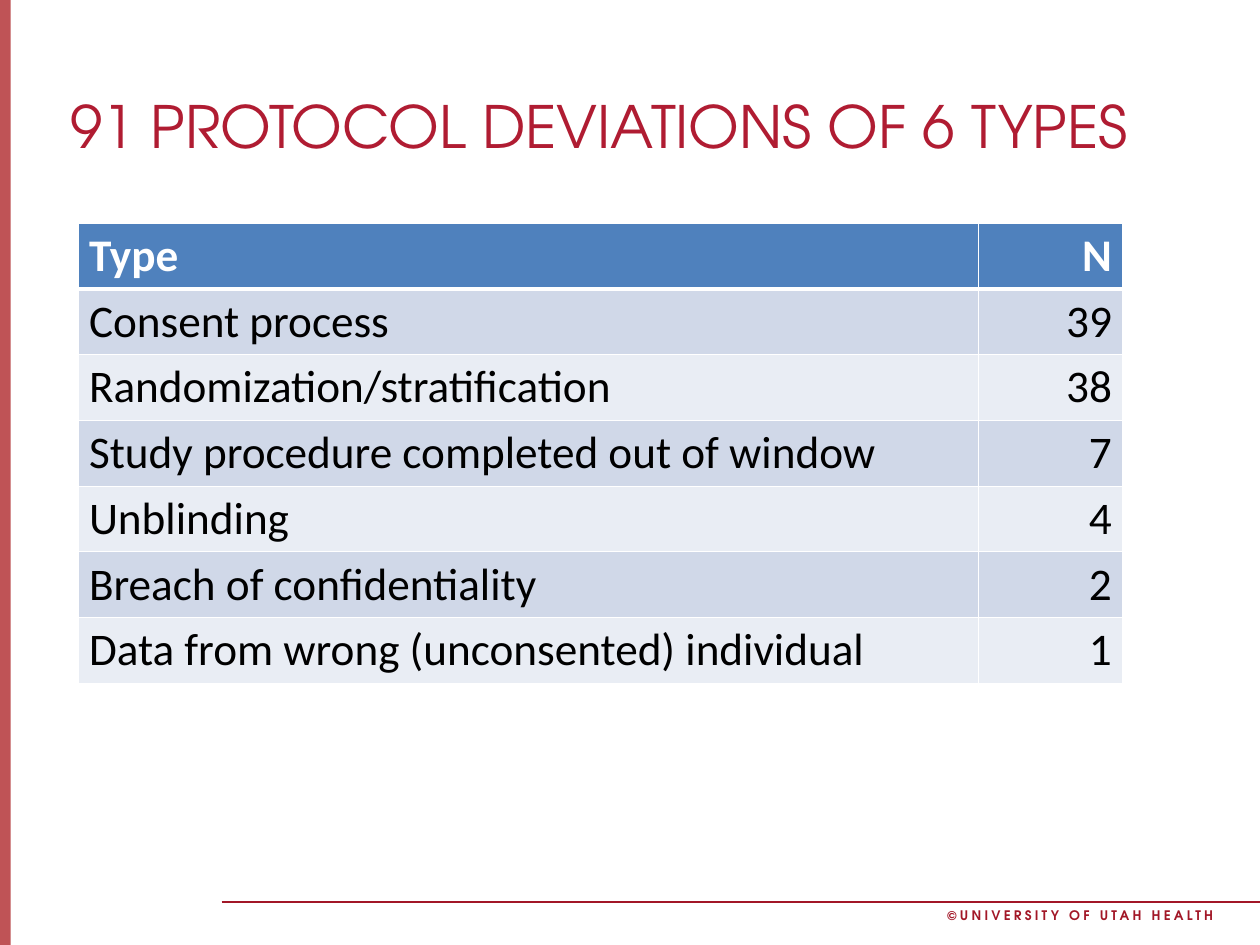
from lxml import etree
from pptx import Presentation
from pptx.dml.color import RGBColor
from pptx.enum.shapes import MSO_CONNECTOR, MSO_SHAPE
from pptx.enum.text import PP_ALIGN
from pptx.oxml.ns import qn
from pptx.util import Cm, Pt

LEFT, RIGHT = PP_ALIGN.LEFT, PP_ALIGN.RIGHT
RECTANGLE = MSO_SHAPE.RECTANGLE
STRAIGHT = MSO_CONNECTOR.STRAIGHT

COLORS = {
    "bar": "AF282C",
    "footer": "A21727",
    "title": "B01C32",
    "header": "4F81BD",
    "band_dark": "D0D8E8",
    "band_light": "E9EDF4",
    "white": "FFFFFF",
    "black": "000000",
}
TITLE_FORMAT = {"name": "TeX Gyre Adventor", "size": Pt(40), "bold": False}
FOOTER_FORMAT = {"name": "TeX Gyre Adventor", "size": Pt(9), "bold": True}
HEADER_FORMAT = {"name": "Calibri", "size": Pt(31), "bold": True}
BODY_FORMAT = {"name": "Calibri", "size": Pt(31), "bold": False}

DEVIATIONS = [
    ("Type", "N"),
    ("Consent process", "39"),
    ("Randomization/stratification", "38"),
    ("Study procedure completed out of window", "7"),
    ("Unblinding", "4"),
    ("Breach of confidentiality", "2"),
    ("Data from wrong (unconsented) individual", "1"),
]
COLUMN_WIDTHS = [Cm(21.77), Cm(3.48)]
COLUMN_ALIGNMENTS = [LEFT, RIGHT]
ROW_HEIGHT = Cm(1.59)


def rgb(color):
    return RGBColor.from_string(COLORS[color])


def write_text(frame, text, font_format, color, alignment=LEFT):
    paragraph = frame.paragraphs[0]
    paragraph.alignment = alignment
    run = paragraph.add_run()
    run.text = text
    for attribute, value in font_format.items():
        setattr(run.font, attribute, value)
    run.font.color.rgb = rgb(color)
    return run


def add_label(slide, box, text, font_format, color, alignment=LEFT):
    label = slide.shapes.add_textbox(*box)
    label.text_frame.word_wrap = True
    return write_text(label.text_frame, text, font_format, color, alignment)


def add_side_bar(slide, height):
    bar = slide.shapes.add_shape(RECTANGLE, 0, 0, Cm(0.26), height)
    bar.shadow.inherit = False
    bar.line.fill.background()
    bar.fill.solid()
    bar.fill.fore_color.rgb = rgb("bar")
    # 80 % opacity
    fill_color = bar.fill._xPr.find(".//" + qn("a:srgbClr"))
    etree.SubElement(fill_color, qn("a:alpha"), val="80000")


def add_footer_rule(slide, right):
    top = Cm(21.82)
    rule = slide.shapes.add_connector(STRAIGHT, Cm(5.36), top, right, top)
    rule.line.color.rgb = rgb("footer")
    rule.line.width = Pt(1)
    etree.SubElement(rule._element.spPr, qn("a:effectLst"))


def set_borders(cell, widths):
    properties = cell._tc.get_or_add_tcPr()
    for side, width in widths.items():
        border = etree.SubElement(properties, qn("a:ln" + side), w=str(Pt(width)))
        fill = etree.SubElement(border, qn("a:solidFill"))
        etree.SubElement(fill, qn("a:srgbClr"), val=COLORS["white"])


def add_deviation_table(slide):
    table = slide.shapes.add_table(
        len(DEVIATIONS), len(COLUMN_WIDTHS), Cm(1.9), Cm(5.4),
        sum(COLUMN_WIDTHS), ROW_HEIGHT * len(DEVIATIONS)).table
    for column, width in zip(table.columns, COLUMN_WIDTHS):
        column.width = width

    for row_number, values in enumerate(DEVIATIONS):
        table.rows[row_number].height = ROW_HEIGHT
        if row_number == 0:
            fill, color, font_format = "header", "white", HEADER_FORMAT
        else:
            fill = "band_dark" if row_number % 2 else "band_light"
            color, font_format = "black", BODY_FORMAT
        # The rule under the header row is thicker than the others
        borders = {"L": 1, "R": 1,
                   "T": 3 if row_number == 1 else 1,
                   "B": 3 if row_number == 0 else 1}
        for column_number, value in enumerate(values):
            cell = table.cell(row_number, column_number)
            set_borders(cell, borders)
            cell.fill.solid()
            cell.fill.fore_color.rgb = rgb(fill)
            write_text(cell.text_frame, value, font_format, color,
                       COLUMN_ALIGNMENTS[column_number])


def main():
    presentation = Presentation()
    presentation.slide_width = Cm(30.48)
    presentation.slide_height = Cm(22.86)
    slide = presentation.slides.add_slide(presentation.slide_layouts[6])

    # Frame and footer
    add_side_bar(slide, presentation.slide_height)
    add_footer_rule(slide, presentation.slide_width)
    footer = add_label(slide, (Cm(21.79), Cm(21.82), Cm(7.8), Cm(0.64)),
                       "©UNIVERSITY OF UTAH HEALTH", FOOTER_FORMAT, "footer", RIGHT)
    footer.font._element.set("spc", "220")

    # Title and table
    add_label(slide, (Cm(1.45), Cm(2.06), Cm(28.32), Cm(18.85)),
              "91 PROTOCOL DEVIATIONS OF 6 TYPES", TITLE_FORMAT, "title")
    add_deviation_table(slide)

    presentation.save("out.pptx")


if __name__ == "__main__":
    main()
